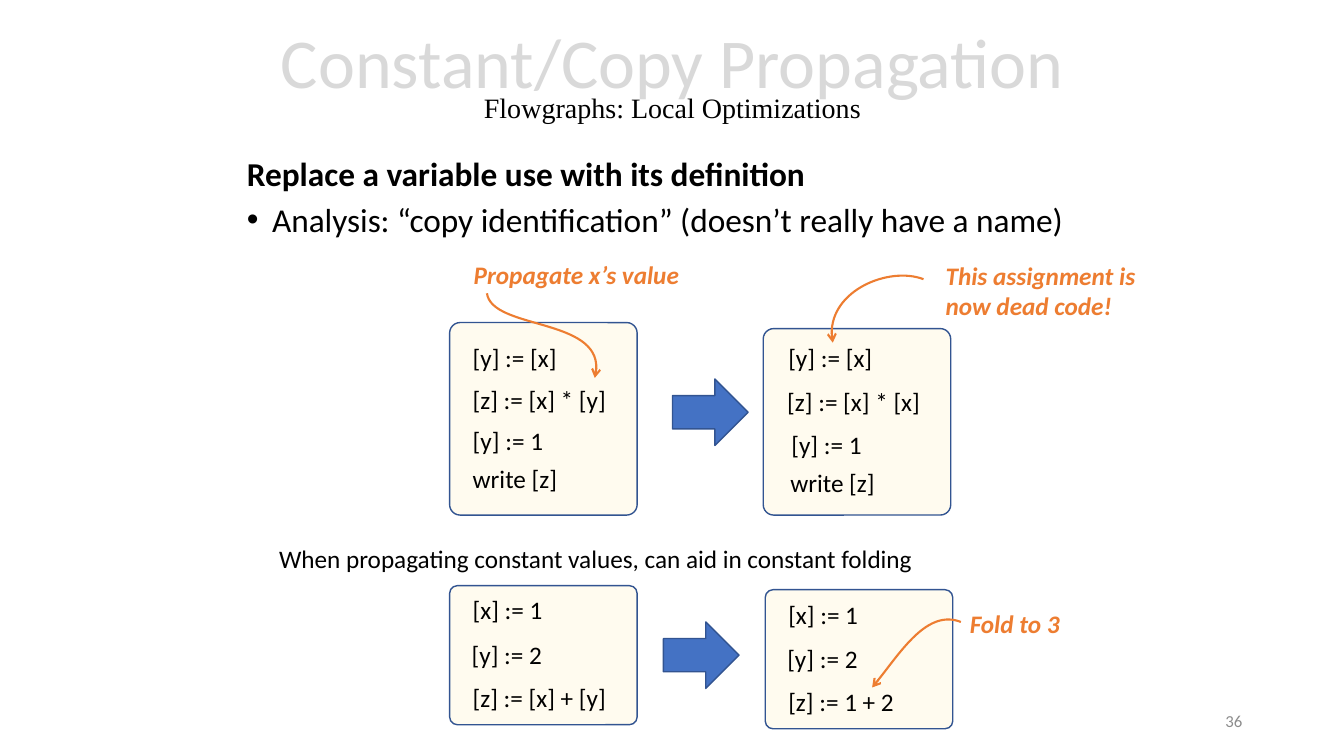
from dataclasses import dataclass

from lxml.etree import SubElement as SubEl
from pptx import Presentation
from pptx.dml.color import RGBColor as Rgb
from pptx.enum.shapes import MSO_SHAPE as Shape
from pptx.enum.text import MSO_ANCHOR as Anchor, MSO_AUTO_SIZE as Auto, PP_ALIGN as Align
from pptx.oxml.ns import qn
from pptx.util import Inches, Pt

COLORS = {
    "black": "000000", "title": "D9D9D9", "page": "8C8C8C", "cream": "FFF2CC",
    "edge": "325491", "blue": "4472C4", "orange": "ED7D31",
}
Point = tuple[float, float]


@dataclass
class Label:
    text: str
    left: float
    top: float
    width: float
    height: float = 0.4


@dataclass
class Block:
    left: float
    top: float
    height: float
    code: list[Label]


BLOCKS = [
    Block(4.46, 3.2, 1.91, [
        Label("[y] := [x]", 4.59, 3.35, 1.04),
        Label("[z] := [x] * [y]", 4.59, 3.76, 1.54),
        Label("[y] := 1", 4.59, 4.17, 0.91),
        Label("write [z]", 4.59, 4.55, 1.05),
    ]),
    Block(7.57, 3.26, 1.85, [
        Label("[y] := [x]", 7.72, 3.35, 1.04),
        Label("[z] := [x] * [x]", 7.71, 3.78, 1.53),
        Label("[y] := 1", 7.75, 4.21, 0.91),
        Label("write [z]", 7.74, 4.59, 1.05),
    ]),
    Block(4.46, 5.81, 1.38, [
        Label("[x] := 1", 4.59, 5.85, 0.9),
        Label("[y] := 2", 4.58, 6.29, 0.91),
        Label("[z] := [x] + [y]", 4.59, 6.72, 1.54),
    ]),
    Block(7.59, 5.85, 1.38, [
        Label("[x] := 1", 7.72, 5.9, 0.9),
        Label("[y] := 2", 7.71, 6.33, 0.91),
        Label("[z] := 1 + 2", 7.72, 6.76, 1.26),
    ]),
]
ARROWS = [(6.67, 3.76), (6.58, 6.17)]
NOTES = [
    Label("Propagate x’s value", 4.6, 2.52, 2.26),
    Label("This assignment is\nnow dead code!", 9.28, 2.53, 2.11, 0.71),
    Label("Fold to 3", 9.52, 5.99, 1.1),
]
CURVES = [
    [(4.83, 2.91), (4.88, 3.27), (6.06, 3.14), (5.9, 3.75)],
    [(9.16, 2.77), (8.82, 2.64), (8.16, 2.91), (8.26, 3.4)],
    [(9.53, 6.17), (9.2, 6.04), (8.9, 6.52), (8.65, 6.82)],
]
HINT = Label("When propagating constant values, can aid in constant folding", 2.67, 5.34, 6.56)
PAGE = Label("36", 9.42, 6.95, 3)


def hue(name: str) -> Rgb:
    return Rgb.from_string(COLORS[name])


def add_run(para, text: str, size: float, color: str = "black",
            face: str = "Calibri", bold: bool = False, slant: bool = False) -> None:
    run = para.add_run()
    run.text = text
    font = run.font
    font.name, font.size = face, Pt(size)
    font.bold, font.italic = bold, slant
    font.color.rgb = hue(color)


def add_box(slide, left: float, top: float, width: float, height: float, wrap: bool):
    box = slide.shapes.add_textbox(*map(Inches, (left, top, width, height)))
    box.text_frame.word_wrap = wrap
    return box.text_frame


def add_label(slide, label: Label, note: bool = False) -> None:
    frame = add_box(slide, label.left, label.top, label.width, label.height, False)
    frame.auto_size = Auto.SHAPE_TO_FIT_TEXT
    for index, line in enumerate(label.text.split("\n")):
        para = frame.add_paragraph() if index else frame.paragraphs[0]
        add_run(para, line, 18, "orange" if note else "black", bold=note, slant=note)


def add_solid(slide, kind: Shape, place: tuple[float, ...], fill: str):
    solid = slide.shapes.add_shape(kind, *map(Inches, place))
    solid.shadow.inherit = False
    solid.fill.solid()
    solid.fill.fore_color.rgb = hue(fill)
    solid.line.color.rgb = hue("edge")
    solid.line.width = Pt(1)
    return solid


def add_block(slide, block: Block) -> None:
    card = add_solid(slide, Shape.ROUNDED_RECTANGLE,
                     (block.left, block.top, 1.86, block.height), "cream")
    card.adjustments[0] = 0.056
    tint = card._element.spPr.find(qn("a:solidFill"))[0]
    SubEl(tint, qn("a:alpha"), val="30000")
    for label in block.code:
        add_label(slide, label)


def add_curve(slide, points: list[Point]) -> None:
    """Draw a cubic arrow from the first point to the last; the others bend it."""
    start, *rest = [(Inches(x), Inches(y)) for x, y in points]
    pen = slide.shapes.build_freeform(*start)
    pen.add_line_segments(rest, close=False)
    curve = pen.convert_to_shape()
    curve.shadow.inherit = False
    curve.fill.background()
    curve.line.color.rgb = hue("orange")
    curve.line.width = Pt(1.5)
    props = curve._element.spPr
    SubEl(props.find(qn("a:ln")), qn("a:tailEnd"), type="arrow")
    route = next(props.iter(qn("a:path")))
    bend = SubEl(route, qn("a:cubicBezTo"))
    for step in route.findall(qn("a:lnTo")):
        bend.append(step[0])
        route.remove(step)


def add_title(slide) -> None:
    title = slide.shapes.title
    title.left, title.top, title.width, title.height = map(Inches, (1.67, 0.09, 10, 1.45))
    frame = title.text_frame
    frame.word_wrap, frame.auto_size = True, Auto.NONE
    frame.vertical_anchor = Anchor.MIDDLE
    para = frame.paragraphs[0]
    para.alignment, para.line_spacing = Align.CENTER, 0.7
    add_run(para, "Constant/Copy Propagation", 50, "title")
    para.add_line_break()
    add_run(para, "Flowgraphs: Local Optimizations", 20, face="Times New Roman")


def add_body(slide) -> None:
    frame = add_box(slide, 2.35, 1.55, 8.45, 0.89, True)
    head, item = frame.paragraphs[0], frame.add_paragraph()
    for para in (head, item):
        para.line_spacing, para.space_before = 0.8, Pt(10)
    add_run(head, "Replace a variable use with its definition", 23.8, bold=True)
    add_run(item, "Analysis: “copy identification” (doesn’t really have a name)", 23.8)
    props = item._p.get_or_add_pPr()
    props.set("marL", str(Inches(0.25)))
    props.set("indent", str(Inches(-0.25)))
    SubEl(props, qn("a:buFont"), typeface="Arial")
    SubEl(props, qn("a:buChar"), char="•")


def add_page(slide) -> None:
    frame = add_box(slide, PAGE.left, PAGE.top, PAGE.width, PAGE.height, True)
    frame.vertical_anchor = Anchor.MIDDLE
    para = frame.paragraphs[0]
    para.alignment = Align.RIGHT
    add_run(para, PAGE.text, 12, "page")


def main() -> None:
    deck = Presentation()
    deck.slide_width, deck.slide_height = Inches(13.33), Inches(7.5)
    slide = deck.slides.add_slide(deck.slide_layouts[5])
    add_title(slide)
    add_body(slide)
    for block in BLOCKS:
        add_block(slide, block)
    for left, top in ARROWS:
        add_solid(slide, Shape.RIGHT_ARROW, (left, top, 0.75, 0.66), "blue")
    for note, points in zip(NOTES, CURVES):
        add_label(slide, note, note=True)
        add_curve(slide, points)
    add_label(slide, HINT)
    add_page(slide)
    deck.save("out.pptx")


if __name__ == "__main__":
    main()
